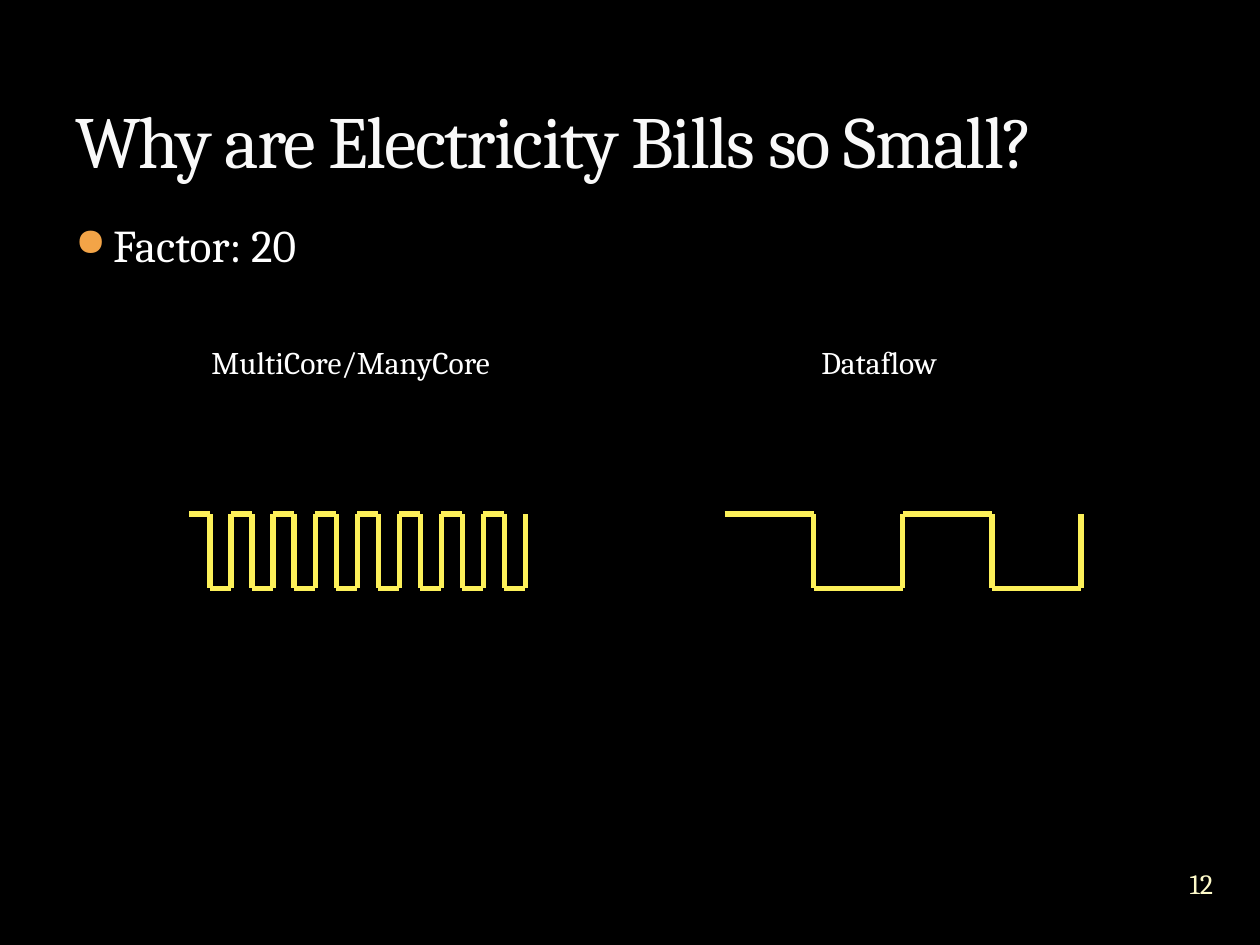
import pptx
import pptx.dml.color
import pptx.enum.shapes
import pptx.enum.text
import pptx.oxml
import pptx.oxml.ns
import pptx.util
from pptx.util import Inches

ANCHOR = pptx.enum.text.MSO_ANCHOR
ALIGN = pptx.enum.text.PP_ALIGN
FONT = "Cambria"
WAVE_COLOR = "FCF059"
BULLET_COLOR = "F3A447"

TITLE = "Why are Electricity Bills so Small?"
BULLET = "Factor: 20"
PAGE_NUMBER = "12"
# text, (left, top, width, height)
LABELS = [
    ("MultiCore/ManyCore", (1.58, 2.67, 2.67, 0.4)),
    ("Dataflow", (6.42, 2.67, 1.5, 0.4)),
]
# left, right, number of clock cycles
WAVES = [(1.5, 4.17, 8), (5.75, 8.58, 2)]
HIGH, LOW = 4.08, 4.67


def rgb(value):
    return pptx.dml.color.RGBColor.from_string(value)


def add_text(page, text, place, size, color="FFFFFF", anchor=ANCHOR.TOP, wrap=True):
    """Add a one-line text box and return its frame, paragraph and run."""
    frame = page.shapes.add_textbox(*map(Inches, place)).text_frame
    frame.word_wrap = wrap
    frame.vertical_anchor = anchor
    para = frame.paragraphs[0]
    span = para.add_run()
    span.text = text
    span.font.name = FONT
    span.font.size = pptx.util.Pt(size)
    span.font.color.rgb = rgb(color)
    return frame, para, span


def add_bullet(para, indent):
    properties = para._p.get_or_add_pPr()
    properties.set("marL", str(Inches(indent)))
    properties.set("indent", str(-Inches(indent)))
    namespace = pptx.oxml.ns.nsdecls("a")
    for element in (
        f'<a:buClr {namespace}><a:srgbClr val="{BULLET_COLOR}"/></a:buClr>',
        f'<a:buSzPct {namespace} val="85000"/>',
        f'<a:buChar {namespace} char="●"/>',
    ):
        properties.append(pptx.oxml.parse_xml(element))


def add_wave(page, left, right, cycles):
    """Draw a square wave as a group of lines, starting high and ending with a rise."""
    half = (right - left) / (2 * cycles)
    points = [(left, HIGH)]
    for step in range(2 * cycles):
        level, following = (HIGH, LOW) if step % 2 == 0 else (LOW, HIGH)
        x = left + (step + 1) * half
        points += [(x, level), (x, following)]
    group = page.shapes.add_group_shape()
    for start, end in zip(points, points[1:]):
        line = group.shapes.add_connector(
            pptx.enum.shapes.MSO_CONNECTOR.STRAIGHT, *map(Inches, start + end))
        line.line.color.rgb = rgb(WAVE_COLOR)
        line.line.width = pptx.util.Pt(3)
        line._element.spPr.append(pptx.oxml.parse_xml(
            f'<a:effectLst {pptx.oxml.ns.nsdecls("a")}/>'))


def main():
    deck = pptx.Presentation()
    deck.slide_width, deck.slide_height = Inches(10), Inches(7.5)
    page = deck.slides.add_slide(deck.slide_layouts[6])
    page.background.fill.solid()
    page.background.fill.fore_color.rgb = rgb("000000")

    _, para, _ = add_text(page, BULLET, (0.5, 1.67, 9, 5), 26)
    para.space_before = pptx.util.Pt(6)
    add_bullet(para, 0.3)

    _, _, span = add_text(page, TITLE, (0.5, 0.17, 9, 1.33), 42, "F9F9F9", ANCHOR.BOTTOM)
    span.font._element.set("spc", "-100")

    for text, place in LABELS:
        add_text(page, text, place, 18)
    for wave in WAVES:
        add_wave(page, *wave)

    frame, para, _ = add_text(
        page, PAGE_NUMBER, (9.2, 6.76, 0.67, 0.5), 16, "FEFAC9", ANCHOR.MIDDLE)
    frame.margin_left = frame.margin_right = frame.margin_top = frame.margin_bottom = 0
    para.alignment = ALIGN.CENTER

    deck.save("out.pptx")


if __name__ == "__main__":
    main()
